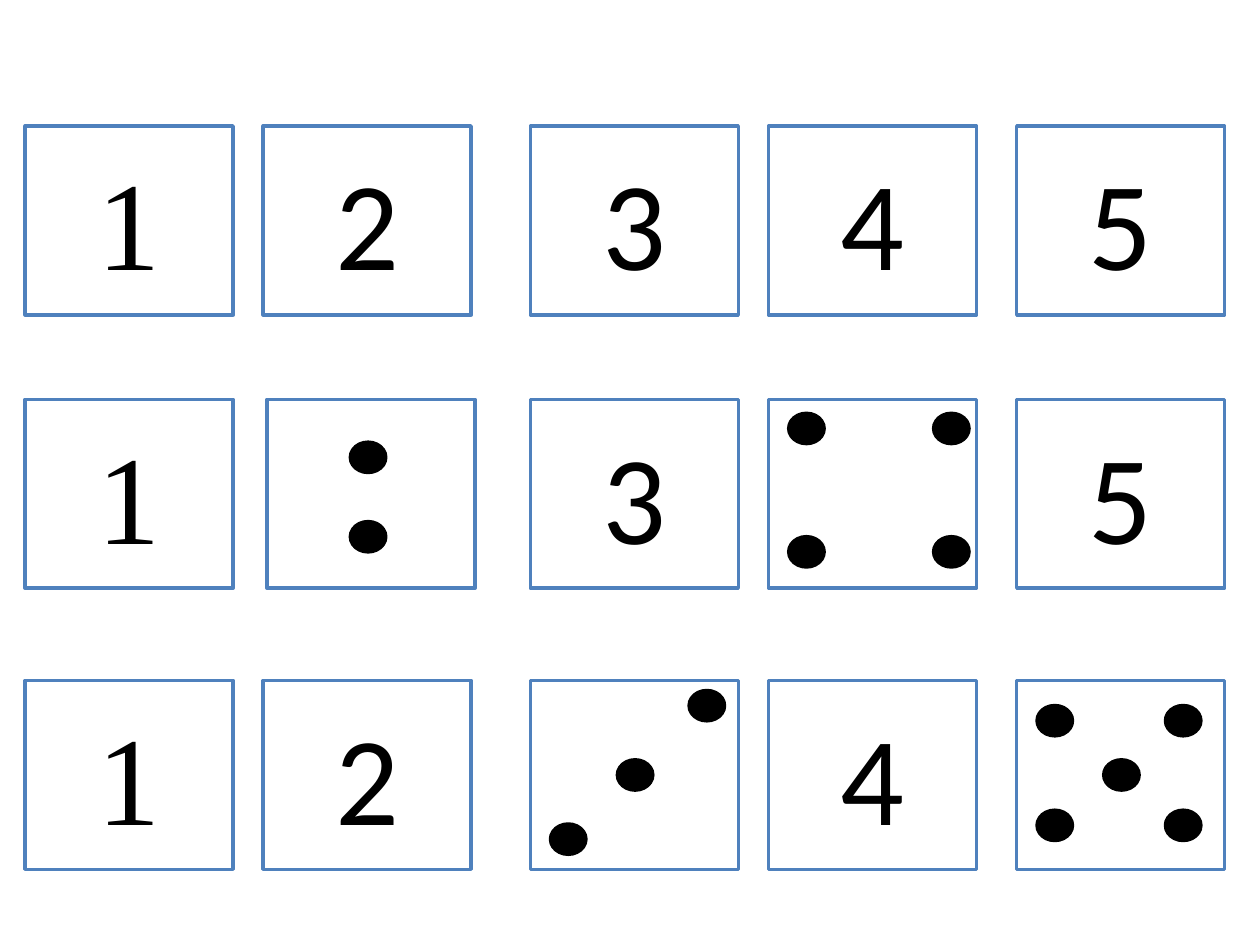
"""Build a slide of number cards and matching dot cards."""
from dataclasses import dataclass
from itertools import product

from pptx import Presentation
from pptx.dml.color import RGBColor
from pptx.enum.shapes import MSO_SHAPE
from pptx.enum.text import MSO_ANCHOR, PP_ALIGN
from pptx.shapes.autoshape import Shape
from pptx.slide import Slide
from pptx.util import Pt

RECT, OVAL = MSO_SHAPE.RECTANGLE, MSO_SHAPE.OVAL
MIDDLE, CENTER = MSO_ANCHOR.MIDDLE, PP_ALIGN.CENTER
WHITE = RGBColor(0xFF, 0xFF, 0xFF)
BLACK = RGBColor(0, 0, 0)
BLUE = RGBColor(0x4F, 0x81, 0xBD)

COLS = (14.4, 150.4, 303.1, 439.2, 581)
ROWS = (72, 228.2, 388.8)
CARD_SIZE = (118.8, 108)
DOT_SIZE = (20.2, 17.3)
MID = (49.7, 45.4)


@dataclass(frozen=True)
class Face:
    dots: tuple[tuple[float, float], ...]
    shift: float = 0


FACES = {
    (1, 2): Face(((47.6, 24.5), (47.6, 69.9)), shift=2.2),
    (1, 4): Face(tuple(product((11.5, 94.3), (8, 78.5)))),
    (2, 3): Face((MID, (90.7, 5.8), (11.5, 82.1))),
    (2, 5): Face((MID, *product((11.6, 85), (14.4, 74.2)))),
}


def add_form(slide: Slide, kind: MSO_SHAPE, left: float, top: float,
             size: tuple[float, float], fill: RGBColor, line: RGBColor) -> Shape:
    form = slide.shapes.add_shape(kind, Pt(left), Pt(top), *map(Pt, size))
    form.shadow.inherit = False
    form.fill.solid()
    form.fill.fore_color.rgb = fill
    form.line.color.rgb = line
    form.line.width = Pt(2)
    return form


def add_digit(card: Shape, num: int) -> None:
    frame = card.text_frame
    frame.vertical_anchor = MIDDLE
    para = frame.paragraphs[0]
    para.alignment = CENTER
    run = para.add_run()
    run.text = str(num)
    run.font.size = Pt(72)
    run.font.name = "Times New Roman" if num == 1 else "Calibri"
    run.font.color.rgb = BLACK


def add_card(slide: Slide, left: float, top: float, num: int, face: Face | None) -> None:
    if face is None:
        add_digit(add_form(slide, RECT, left, top, CARD_SIZE, WHITE, BLUE), num)
        return
    left += face.shift
    add_form(slide, RECT, left, top, CARD_SIZE, WHITE, BLUE)
    for x, y in face.dots:
        add_form(slide, OVAL, left + x, top + y, DOT_SIZE, BLACK, BLACK)


def main() -> None:
    deck = Presentation()
    deck.slide_width, deck.slide_height = Pt(720), Pt(540)
    slide = deck.slides.add_slide(deck.slide_layouts[6])
    for row, top in enumerate(ROWS):
        for num, left in enumerate(COLS, 1):
            add_card(slide, left, top, num, FACES.get((row, num)))
    deck.save("out.pptx")


if __name__ == "__main__":
    main()
